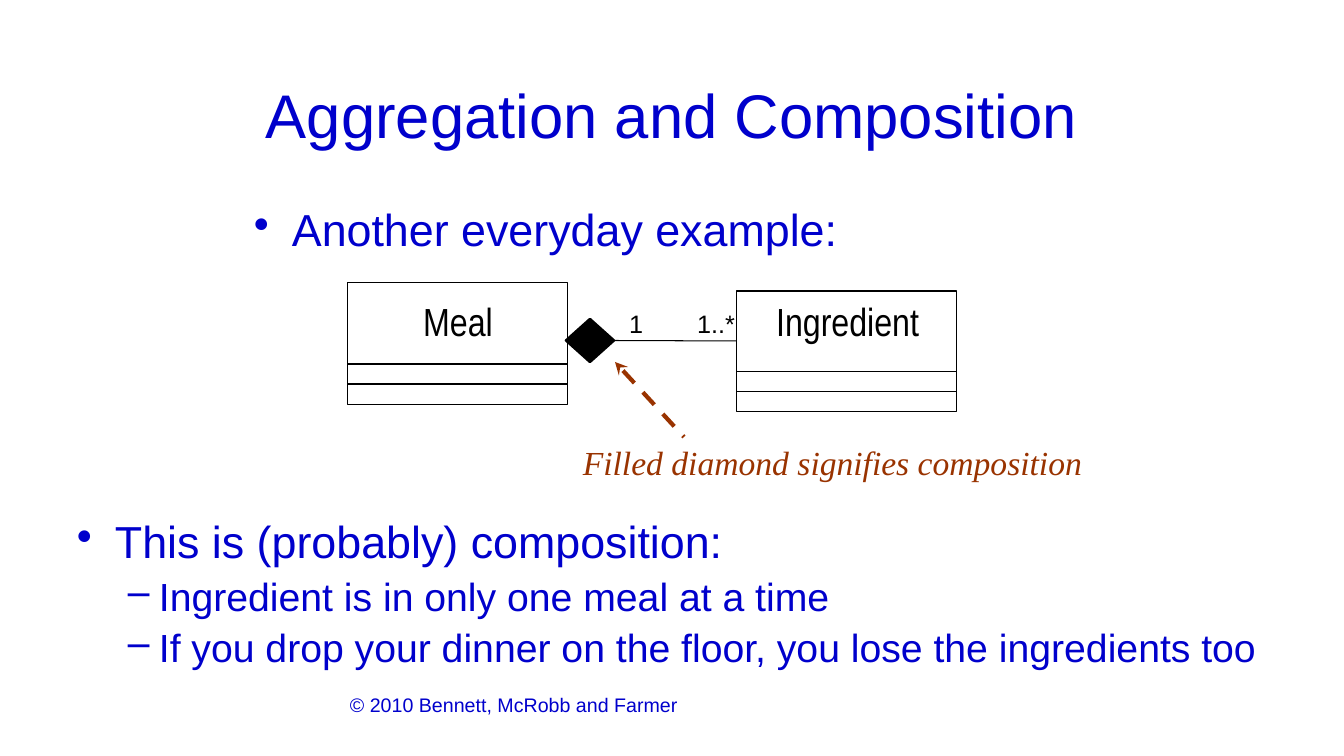
from lxml import etree
from pptx import Presentation, util as u
from pptx.dml.color import RGBColor
from pptx.enum import dml, shapes, text
from pptx.oxml.ns import qn

# Content: boxes are (left, top, width, height) in px
TITLE = ("Aggregation and Composition", (67, 30, 1210, 126))
FOOTER = ("© 2010 Bennett, McRobb and Farmer", (340, 688, 615, 52))
INTRO = ([("Another everyday example:", 0)], (244, 203, 857, 82))
REASONS = ([
    ("This is (probably) composition:", 0),
    ("Ingredient is in only one meal at a time", 1),
    ("If you drop your dinner on the floor, you lose the ingredients too", 1),
], (67, 515, 1226, 239))
NOTE = ("Filled diamond signifies composition", (566, 437, 533, 50))
CLASSES = [  # name, frame, label box
    ("Meal", (348, 283, 220, 122), (423, 297, 70, 47)),
    ("Ingredient", (737, 291, 220, 121), (776, 297, 143, 47)),
]
MULTIPLICITIES = [("1..*", (697, 308, 38, 30)), ("1", (629, 308, 14, 30))]
PANEL = (244, 267, 857, 220)
DIAMOND = (566, 319, 48, 43)
ASSOCIATION = ((614, 341), (737, 341))
POINTER = ((615, 362), (684, 437))
COMPARTMENTS = (81, 101)  # divider offsets below a class frame's top
BULLETS = [("•", 38, 38), ("–", 82, 31)]  # mark, left margin, hang


class Theme:
    blue, black, white, rust = (RGBColor.from_string(c) for c in (
        "0000CC", "000000", "FFFFFF", "993300"))
    sans, narrow, serif = "Arial", "Arial Narrow", "Times New Roman"
    title, label, note, small, footer = 44, 28, 24, 18, 14
    body = (32, 28)
    thin, medium, thick = 0.75, 1.75, 3


PX = 914400 / 100.8


def px(value):
    return u.Emu(round(value * PX))


deck = Presentation()
deck.slide_width, deck.slide_height = px(1344), px(756)
page = deck.slides.add_slide(deck.slide_layouts[6])


def add_text(lines, box, size=Theme.label, font=Theme.sans, color=Theme.blue,
             align=text.PP_ALIGN.LEFT, anchor=text.MSO_ANCHOR.TOP,
             italic=False, tight=False):
    """Write one string, or a list of (string, bullet level) pairs."""
    frame = page.shapes.add_textbox(*map(px, box)).text_frame
    frame.word_wrap = not tight
    frame.vertical_anchor = anchor
    if tight:
        frame.margin_left = frame.margin_right = 0
        frame.margin_top = frame.margin_bottom = 0
    if isinstance(lines, str):
        lines = [(lines, None)]
    for index, (line, level) in enumerate(lines):
        para = frame.paragraphs[0] if index == 0 else frame.add_paragraph()
        para.alignment = align
        if level is not None:
            mark, margin, hang = BULLETS[level]
            para.level = level
            para.line_spacing = 0.9
            if index:
                para.space_before = u.Pt(6.5)
            props = para._p.get_or_add_pPr()
            props.set("marL", str(px(margin)))
            props.set("indent", str(-px(hang)))
            etree.SubElement(props, qn("a:buChar")).set("char", mark)
        span = para.add_run()
        span.text = line
        span.font.size = u.Pt(size if level is None else Theme.body[level])
        span.font.name = font
        span.font.color.rgb = color
        span.font.italic = italic


def add_box(kind, box, fill=None, line=Theme.black, width=Theme.thin):
    shape = page.shapes.add_shape(kind, *map(px, box))
    shape.shadow.inherit = False
    if fill is None:
        shape.fill.background()
    else:
        shape.fill.solid()
        shape.fill.fore_color.rgb = fill
    shape.line.color.rgb = line
    shape.line.width = u.Pt(width)
    return shape


def add_line(start, end, color=Theme.black, width=Theme.thin):
    line = page.shapes.add_connector(
        shapes.MSO_CONNECTOR.STRAIGHT, *map(px, (*start, *end)))
    line.line.color.rgb = color
    line.line.width = u.Pt(width)
    etree.SubElement(line._element.spPr, qn("a:effectLst"))
    return line


CENTER = text.PP_ALIGN.CENTER
RECTANGLE = shapes.MSO_SHAPE.RECTANGLE

# Footer and opening bullet
add_text(*FOOTER, size=Theme.footer)
add_text(*INTRO)

# Class diagram
add_box(RECTANGLE, PANEL, fill=Theme.white, line=Theme.white,
        width=Theme.medium)
for name, frame_box, label_box in CLASSES:
    add_box(RECTANGLE, frame_box)
    add_text(name, label_box, font=Theme.narrow, color=Theme.black,
             align=CENTER, tight=True)
    left, top, width, _ = frame_box
    for offset in COMPARTMENTS:
        add_line((left, top + offset), (left + width, top + offset))
for label, box in MULTIPLICITIES:
    add_text(label, box, size=Theme.small, color=Theme.black,
             align=CENTER, tight=True)

# Composition link with its filled diamond
association = add_line(*ASSOCIATION)
diamond = add_box(shapes.MSO_SHAPE.DIAMOND, DIAMOND, fill=Theme.black,
                  width=Theme.medium)
association.begin_connect(diamond, 3)

# Explanatory note and its dashed arrow
add_text(*NOTE, size=Theme.note, font=Theme.serif, color=Theme.rust,
         align=CENTER, italic=True)
pointer = add_line(*POINTER, color=Theme.rust, width=Theme.thick)
pointer.line.dash_style = dml.MSO_LINE.DASH
etree.SubElement(pointer.line._get_or_add_ln(),
                 qn("a:headEnd")).set("type", "stealth")

# Title and closing bullets
add_text(*TITLE, size=Theme.title, align=CENTER,
         anchor=text.MSO_ANCHOR.BOTTOM)
add_text(*REASONS)

deck.save("out.pptx")
